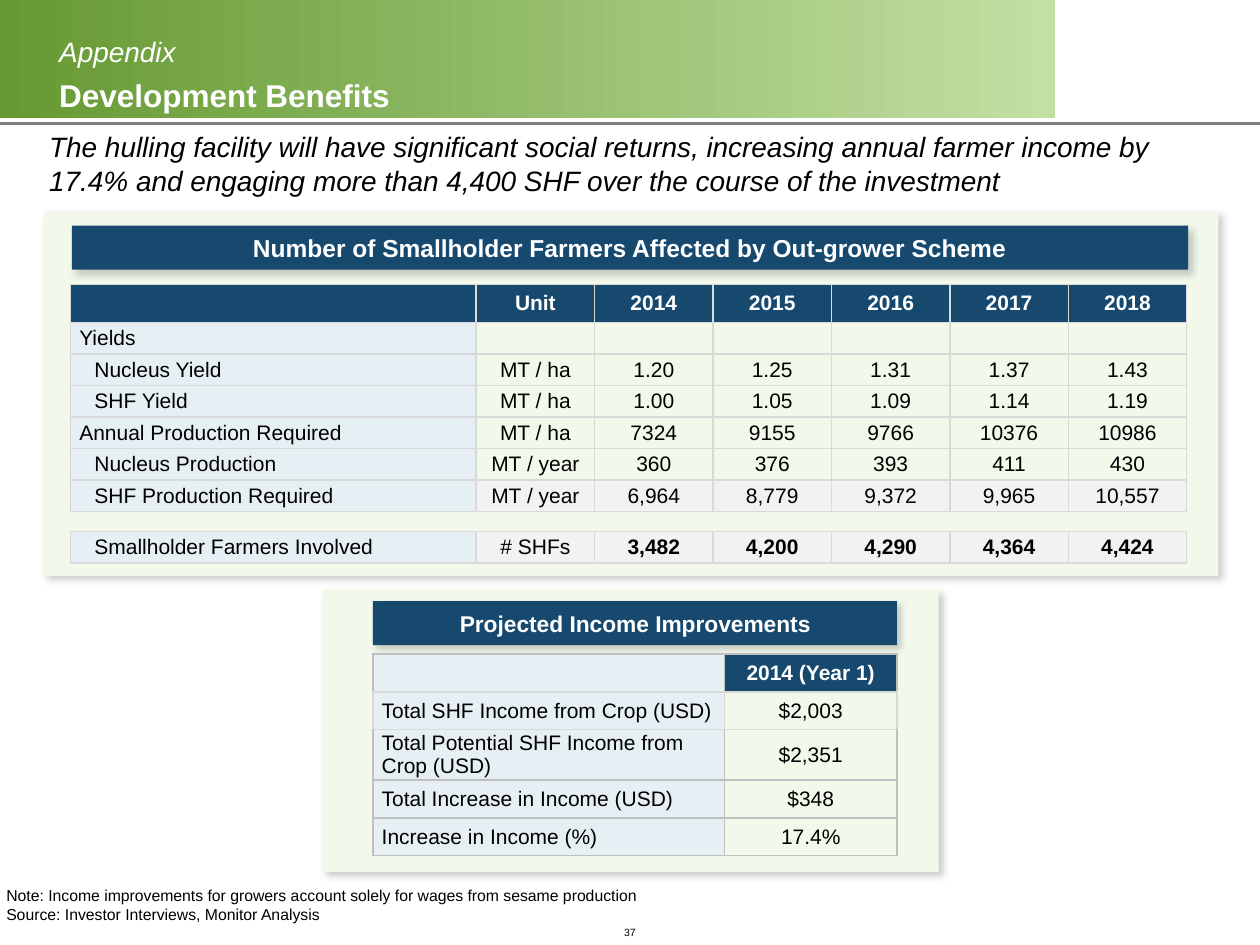
from dataclasses import dataclass
from typing import Optional

from lxml.etree import SubElement
from pptx import Presentation
from pptx.dml.color import RGBColor
from pptx.enum.shapes import MSO_CONNECTOR, MSO_SHAPE
from pptx.enum.text import MSO_ANCHOR, PP_ALIGN
from pptx.oxml import parse_xml
from pptx.oxml.ns import nsdecls, qn
from pptx.util import Inches, Pt

BLACK = RGBColor(0x00, 0x00, 0x00)
WHITE = RGBColor(0xFF, 0xFF, 0xFF)
NAVY = RGBColor(0x17, 0x49, 0x6F)
GREEN = RGBColor(0x66, 0x99, 0x33)
LIGHT_GREEN = RGBColor(0xC2, 0xE0, 0xA3)
PANEL_GREEN = RGBColor(0xF2, 0xF9, 0xEB)
LABEL_BLUE = RGBColor(0xE6, 0xF0, 0xF4)
TOTAL_GRAY = RGBColor(0xF2, 0xF2, 0xF2)
RULE_GRAY = RGBColor(0x80, 0x80, 0x80)
PALE_EDGE = RGBColor(0xD9, 0xD9, 0xD9)
DARK_EDGE = RGBColor(0xBF, 0xBF, 0xBF)
FONT = "Arial"


@dataclass
class Box:
    left: float
    top: float
    width: float
    height: float

    def lengths(self) -> tuple:
        return tuple(Inches(v) for v in (self.left, self.top, self.width, self.height))


@dataclass
class Row:
    values: list[str]
    height: float = 0.25
    label_fill: RGBColor = LABEL_BLUE
    value_fill: Optional[RGBColor] = None
    color: RGBColor = BLACK
    indent: float = 0
    bold: bool = False
    bold_from: int = 0
    edge: RGBColor = PALE_EDGE


def style_run(run, size: float, color=BLACK, bold=False, italic=False) -> None:
    font = run.font
    font.name, font.size, font.bold, font.italic = FONT, Pt(size), bold, italic
    font.color.rgb = color


def set_margins(frame, horizontal: float, vertical: float) -> None:
    frame.margin_left = frame.margin_right = Inches(horizontal)
    frame.margin_top = frame.margin_bottom = Inches(vertical)


def add_text(slide, box: Box, text: str, size: float, anchor=MSO_ANCHOR.TOP,
             align=PP_ALIGN.LEFT, italic=False, wrap=True) -> None:
    frame = slide.shapes.add_textbox(*box.lengths()).text_frame
    frame.word_wrap = wrap
    frame.vertical_anchor = anchor
    set_margins(frame, 0.05, 0.05)
    frame.text = text
    for paragraph in frame.paragraphs:
        paragraph.alignment = align
        for run in paragraph.runs:
            style_run(run, size, italic=italic)


def add_block(slide, box: Box, color: RGBColor, text="", size=14.0) -> None:
    """Rectangle with a soft shadow and an optional centred heading."""
    shape = slide.shapes.add_shape(MSO_SHAPE.RECTANGLE, *box.lengths())
    shape.fill.solid()
    shape.fill.fore_color.rgb = color
    shape.line.fill.background()
    shape._element.spPr.append(parse_xml(
        f'<a:effectLst {nsdecls("a")}><a:outerShdw blurRad="{Pt(4)}" dist="{Pt(3)}" '
        'dir="2700000" algn="tl" rotWithShape="0"><a:srgbClr val="808080">'
        '<a:alpha val="40000"/></a:srgbClr></a:outerShdw></a:effectLst>'))
    if text:
        frame = shape.text_frame
        frame.word_wrap = True
        frame.vertical_anchor = MSO_ANCHOR.MIDDLE
        set_margins(frame, 0.05, 0.05)
        frame.text = text
        paragraph = frame.paragraphs[0]
        paragraph.alignment = PP_ALIGN.CENTER
        style_run(paragraph.runs[0], size, WHITE, bold=True)


def set_borders(cell, side: RGBColor, top: RGBColor, bottom: RGBColor) -> None:
    properties = cell._tc.get_or_add_tcPr()
    edges = {"lnL": side, "lnR": side, "lnT": top, "lnB": bottom}
    for position, (tag, color) in enumerate(edges.items()):
        properties.insert(position, parse_xml(
            f'<a:{tag} {nsdecls("a")} w="{Pt(1)}"><a:solidFill>'
            f'<a:srgbClr val="{color}"/></a:solidFill></a:{tag}>'))


def fill_cell(cell, row: Row, column: int) -> None:
    color = row.value_fill if column else row.label_fill
    if color is None:
        cell.fill.background()
    else:
        cell.fill.solid()
        cell.fill.fore_color.rgb = color
    set_margins(cell, 0.07, 0)
    cell.vertical_anchor = MSO_ANCHOR.MIDDLE
    cell.text_frame.text = row.values[column]
    paragraph = cell.text_frame.paragraphs[0]
    if not row.values[column]:
        SubElement(paragraph._p, qn("a:endParaRPr")).set("sz", "1200")
        return
    if column:
        paragraph.alignment = PP_ALIGN.CENTER
    elif row.indent:
        paragraph._p.get_or_add_pPr().set("marL", str(Inches(row.indent)))
    bold = row.bold and column >= row.bold_from
    style_run(paragraph.runs[0], 12, row.color, bold)


def add_grid(slide, left: float, top: float, widths: list[float], rows: list[Row]) -> None:
    box = Box(left, top, sum(widths), sum(row.height for row in rows))
    table = slide.shapes.add_table(len(rows), len(widths), *box.lengths()).table
    table.first_row = table.horz_banding = False
    for column, width in enumerate(widths):
        table.columns[column].width = Inches(width)
    for index, row in enumerate(rows):
        table.rows[index].height = Inches(row.height)
        # A shared edge is pale when either neighbouring row is pale
        above = rows[max(index - 1, 0)].edge
        below = rows[min(index + 1, len(rows) - 1)].edge
        top_edge, bottom_edge = (
            PALE_EDGE if PALE_EDGE in (row.edge, other) else row.edge
            for other in (above, below))
        for column in range(len(widths)):
            cell = table.cell(index, column)
            fill_cell(cell, row, column)
            set_borders(cell, row.edge, top_edge, bottom_edge)


def add_header(slide) -> None:
    band = slide.shapes.add_shape(MSO_SHAPE.RECTANGLE, *Box(0, 0, 8.37, 0.94).lengths())
    band.shadow.inherit = False
    band.line.fill.background()
    band.fill.gradient()
    band.fill.gradient_angle = 0
    for stop, color in zip(band.fill.gradient_stops, (GREEN, LIGHT_GREEN)):
        stop.color.rgb = color
    rule = slide.shapes.add_connector(
        MSO_CONNECTOR.STRAIGHT, Inches(0), Inches(0.98), Inches(10), Inches(0.98))
    rule.line.color.rgb = RULE_GRAY
    rule.line.width = Pt(2.25)
    SubElement(rule._element.spPr, qn("a:effectLst"))

    frame = slide.shapes.add_textbox(*Box(0.42, 0.04, 7.87, 0.86).lengths()).text_frame
    frame.word_wrap = True
    frame.vertical_anchor = MSO_ANCHOR.BOTTOM
    set_margins(frame, 0.05, 0)
    frame.text = "Appendix\vDevelopment Benefits"
    paragraph = frame.paragraphs[0]
    paragraph.line_spacing = 1.2
    section, title = paragraph.runs
    style_run(section, 16, WHITE, italic=True)
    style_run(title, 18, WHITE, bold=True)


def main() -> None:
    presentation = Presentation()
    presentation.slide_width, presentation.slide_height = Inches(10), Inches(7.5)
    slide = presentation.slides.add_slide(presentation.slide_layouts[6])

    # Header, key message and footer
    add_header(slide)
    add_text(slide, Box(4.9, 7.3, 0.2, 0.2), "37", 6, MSO_ANCHOR.BOTTOM,
             PP_ALIGN.CENTER, wrap=False)
    add_text(slide, Box(0.34, 0.98, 9.31, 0.64),
             "The hulling facility will have significant social returns, increasing annual "
             "farmer income by 17.4% and engaging more than 4,400 SHF over the course of "
             "the investment", 16, italic=True)
    add_text(slide, Box(0, 6.61, 10, 0.77),
             "Note: Income improvements for growers account solely for wages from sesame "
             "production\nSource: Investor Interviews, Monitor Analysis", 9, MSO_ANCHOR.BOTTOM)

    # Panels and their headings
    add_block(slide, Box(2.56, 4.68, 4.89, 2.24), PANEL_GREEN)
    add_block(slide, Box(0.35, 1.68, 9.32, 2.89), PANEL_GREEN)
    add_block(slide, Box(0.57, 1.79, 8.86, 0.35), NAVY,
              "Number of Smallholder Farmers Affected by Out-grower Scheme", 14)
    add_block(slide, Box(2.96, 4.77, 4.16, 0.35), NAVY, "Projected Income Improvements", 13)

    # Income table
    add_grid(slide, 2.96, 5.19, [2.79, 1.37], [
        Row(["", "2014 (Year 1)"], 0.3, value_fill=NAVY, color=WHITE, bold=True, edge=DARK_EDGE),
        Row(["Total SHF Income from Crop (USD)", "$2,003"], 0.3),
        Row(["Total Potential SHF Income from Crop (USD)", "$2,351"], 0.4, edge=DARK_EDGE),
        Row(["Total Increase in Income (USD)", "$348"], 0.3, edge=DARK_EDGE),
        Row(["Increase in Income (%)", "17.4%"], 0.3, edge=DARK_EDGE),
    ])

    # Out-grower tables
    widths = [3.22] + [0.94] * 6
    add_grid(slide, 0.56, 2.26, widths, [
        Row(["", "Unit", "2014", "2015", "2016", "2017", "2018"], 0.3, NAVY, NAVY, WHITE, bold=True),
        Row(["Yields"] + [""] * 6),
        Row(["Nucleus Yield", "MT / ha", "1.20", "1.25", "1.31", "1.37", "1.43"], indent=0.12),
        Row(["SHF Yield", "MT / ha", "1.00", "1.05", "1.09", "1.14", "1.19"], indent=0.12),
        Row(["Annual Production Required", "MT / ha", "7324", "9155", "9766", "10376", "10986"]),
        Row(["Nucleus Production", "MT / year", "360", "376", "393", "411", "430"], indent=0.12),
        Row(["SHF Production Required", "MT / year", "6,964", "8,779", "9,372", "9,965", "10,557"],
            value_fill=TOTAL_GRAY, indent=0.12),
    ])
    add_grid(slide, 0.56, 4.22, widths, [
        Row(["Smallholder Farmers Involved", "# SHFs", "3,482", "4,200", "4,290", "4,364", "4,424"],
            value_fill=TOTAL_GRAY, indent=0.12, bold=True, bold_from=2),
    ])
    presentation.save("out.pptx")


if __name__ == "__main__":
    main()
